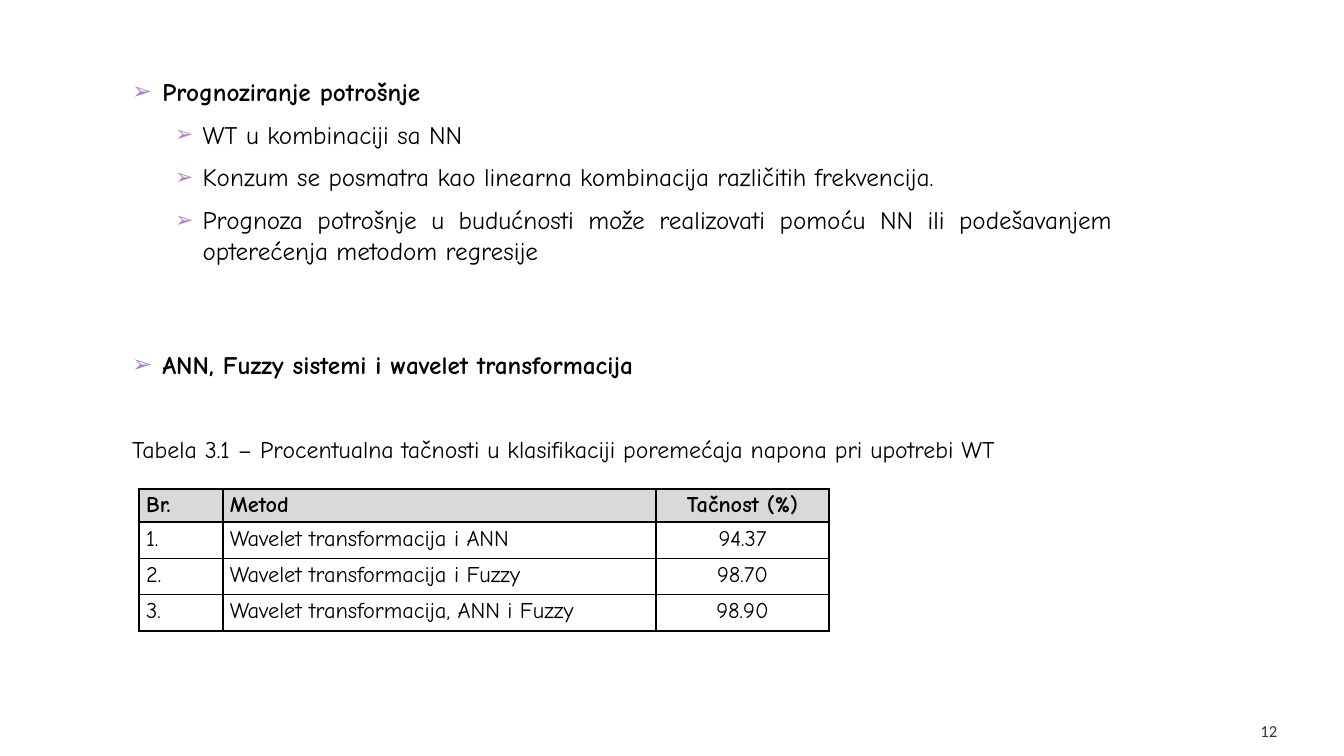
from dataclasses import dataclass

from lxml import etree
from pptx import Presentation
from pptx import util as u
from pptx.dml.color import RGBColor
from pptx.enum import text
from pptx.oxml import ns

FONT = "Comic Neue"
BLACK = "000000"
ACCENT = "AD84C6"
LEFT, CENTER = text.PP_ALIGN.JUSTIFY, text.PP_ALIGN.CENTER


@dataclass(frozen=True)
class Style:
    margin: float
    indent: float
    bullet_size: int
    size: float
    bold: bool


@dataclass(frozen=True)
class Line:
    words: str
    style: Style
    before: float


@dataclass(frozen=True)
class Column:
    width: float
    align: text.PP_ALIGN


HEADING = Style(0.3, -0.3, 95, 18, True)
ITEM = Style(0.7, -0.27, 85, 18, False)
CAPTION = Style(0, 0, 0, 17, False)

LINES = [
    Line("Prognoziranje potrošnje", HEADING, 0),
    Line("WT u kombinaciji sa NN", ITEM, 8.6),
    Line("Konzum se posmatra kao linearna kombinacija različitih frekvencija.", ITEM, 8.6),
    Line("Prognoza potrošnje u budućnosti može realizovati pomoću NN ili "
         "podešavanjem opterećenja metodom regresije", ITEM, 8.6),
    Line("ANN, Fuzzy sistemi i wavelet transformacija", HEADING, 59.4),
    Line("Tabela 3.1 – Procentualna tačnosti u klasifikaciji poremećaja napona "
         "pri upotrebi WT", CAPTION, 38),
]

COLUMNS = [Column(0.83, LEFT), Column(4.3, LEFT), Column(1.71, CENTER)]
ROWS = [
    ("Br.", "Metod", "Tačnost (%)"),
    ("1.", "Wavelet transformacija i ANN", "94.37"),
    ("2.", "Wavelet transformacija i Fuzzy", "98.70"),
    ("3.", "Wavelet transformacija, ANN i Fuzzy", "98.90"),
]


def rgb(value: str) -> RGBColor:
    return RGBColor.from_string(value)


def add_xml(parent, tag: str, **attrs: str):
    return etree.SubElement(parent, ns.qn(tag), attrs)


def format_runs(p, size: float, bold: bool = False, font: str = FONT, color: str = BLACK) -> None:
    for r in p.runs:
        r.font.name = font
        r.font.size = u.Pt(size)
        r.font.bold = bold
        r.font.color.rgb = rgb(color)


def set_bullet(p, style: Style) -> None:
    pPr = p._p.get_or_add_pPr()
    pPr.set("marL", str(u.Inches(style.margin)))
    pPr.set("indent", str(u.Inches(style.indent)))
    if not style.bullet_size:
        add_xml(pPr, "a:buNone")
        return
    add_xml(add_xml(pPr, "a:buClr"), "a:srgbClr", val=ACCENT)
    add_xml(pPr, "a:buSzPct", val=str(style.bullet_size * 1000))
    add_xml(pPr, "a:buChar", char="➢")


def fill_body(sp) -> None:
    sp.left, sp.top, sp.width, sp.height = map(u.Inches, (1.21, 0.7, 9.92, 6.57))
    tf = sp.text_frame
    tf.text = "\n".join(line.words for line in LINES)
    tf.word_wrap = True
    tf.auto_size = text.MSO_AUTO_SIZE.NONE
    tf.vertical_anchor = text.MSO_ANCHOR.TOP
    for p, line in zip(tf.paragraphs, LINES):
        set_bullet(p, line.style)
        p.alignment = text.PP_ALIGN.JUSTIFY
        p.line_spacing = u.Pt(22)
        p.space_before = u.Pt(line.before)
        p.space_after = u.Pt(0)
        format_runs(p, line.style.size, line.style.bold)


def set_borders(cell, top: float, bottom: float) -> None:
    tcPr = cell._tc.get_or_add_tcPr()
    for side, width in (("L", 1.5), ("R", 1.5), ("T", top), ("B", bottom)):
        ln = add_xml(tcPr, f"a:ln{side}", w=str(u.Pt(width)))
        add_xml(add_xml(ln, "a:solidFill"), "a:srgbClr", val=BLACK)


def add_accuracy_table(s) -> None:
    box = map(u.Inches, (1.38, 4.85, 6.84, 1.41))
    table = s.shapes.add_table(len(ROWS), len(COLUMNS), *box).table
    table.horz_banding = False
    table.first_row = False
    for i, column in enumerate(COLUMNS):
        table.columns[i].width = u.Inches(column.width)
    last = len(ROWS) - 1
    for i, row in enumerate(ROWS):
        header = i == 0
        table.rows[i].height = u.Inches(0.33 if header else 0.36)
        for j, words in enumerate(row):
            cell = table.cell(i, j)
            set_borders(cell, 1.5 if i <= 1 else 1, 1.5 if i in (0, last) else 1)
            if header:
                cell.fill.solid()
                cell.fill.fore_color.rgb = rgb("D9D9D9")
            else:
                cell.fill.background()
            cell.margin_left = cell.margin_right = u.Inches(0.07)
            cell.margin_top = cell.margin_bottom = 0
            p = cell.text_frame.paragraphs[0]
            p.text = words
            p.alignment = COLUMNS[j].align
            p.line_spacing = 1.15
            format_runs(p, 16, header)


def add_page_number(s) -> None:
    sp = s.shapes.add_textbox(*map(u.Inches, (11.56, 6.95, 1.11, 0.4)))
    tf = sp.text_frame
    tf.word_wrap = True
    tf.margin_left = tf.margin_right = tf.margin_top = tf.margin_bottom = 0
    tf.vertical_anchor = text.MSO_ANCHOR.BOTTOM
    p = tf.paragraphs[0]
    p.text = "12"
    p.alignment = text.PP_ALIGN.RIGHT
    format_runs(p, 12, font="Calibri", color="353342")


def main() -> None:
    prs = Presentation()
    prs.slide_width, prs.slide_height = u.Inches(13.33), u.Inches(7.5)
    s = prs.slides.add_slide(prs.slide_layouts[1])
    title = s.shapes.title._element
    title.getparent().remove(title)
    fill_body(s.placeholders[1])
    add_page_number(s)
    add_accuracy_table(s)
    prs.save("out.pptx")


if __name__ == "__main__":
    main()
